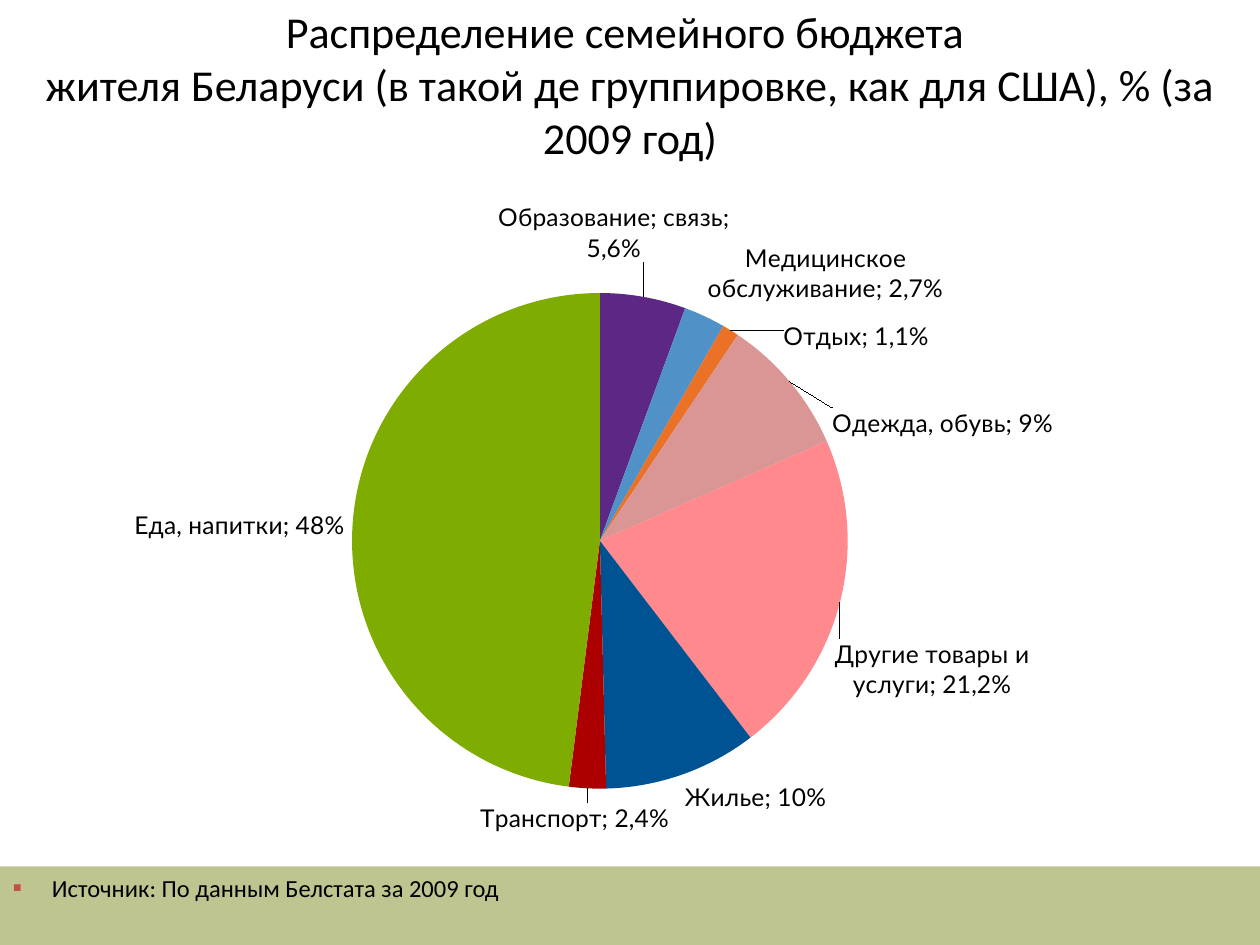
from lxml import etree
from pptx import Presentation
from pptx.chart.data import CategoryChartData
from pptx.dml.color import RGBColor
from pptx.enum.chart import XL_CHART_TYPE as ChartType, XL_LABEL_POSITION as LabelPosition
from pptx.enum.text import MSO_ANCHOR as Anchor, MSO_AUTO_SIZE as AutoSize, PP_ALIGN as Align
from pptx.oxml import parse_xml
from pptx.oxml.ns import nsdecls, qn
from pptx.util import Pt

COLORS = {"text": "000000", "background": "FFFFFF", "footer": "BEC591", "bullet": "C0504D"}

# Category, percentage, slice colour, label shift as a share of the chart size
SLICES = [
    ("Образование; связь", 5.6, "5D2884", (-0.12, -0.04)),
    ("Медицинское обслуживание", 2.7, "5092C8", (0.0, -0.01)),
    ("Отдых", 1.1, "EA7126", (0.04, 0.04)),
    ("Одежда, обувь", 9, "D99694", (0.03, 0.09)),
    ("Другие товары и услуги", 21.2, "FF898C", (-0.01, 0.05)),
    ("Жилье", 10, "005392", None),
    ("Транспорт", 2.4, "AC0000", (-0.01, 0.01)),
    ("Еда, напитки", 48, "7FAC00", None),
]


def write_text(paragraph, text, size, font="Calibri", color="text", align=None):
    paragraph.text = text
    paragraph.alignment = align
    paragraph.space_before = Pt(0)
    for run in paragraph.runs:
        run.font.size = Pt(size)
        run.font.name = font
        run.font.color.rgb = RGBColor.from_string(COLORS[color])


def manual_layout(**settings):
    parts = "".join(f'<c:{name} val="{value}"/>' for name, value in settings.items())
    return parse_xml(f'<c:layout {nsdecls("c")}><c:manualLayout>{parts}</c:manualLayout></c:layout>')


presentation = Presentation()
presentation.slide_width, presentation.slide_height = Pt(720), Pt(540)
slide = presentation.slides.add_slide(presentation.slide_layouts[1])
title, footer = slide.placeholders

# Title and source bar
for shape, top, height, fill, anchor in (
    (title, 0, 96, "background", Anchor.MIDDLE),
    (footer, 495, 45, "footer", Anchor.TOP),
):
    shape.left, shape.top, shape.width, shape.height = Pt(0), Pt(top), Pt(720), Pt(height)
    shape.fill.solid()
    shape.fill.fore_color.rgb = RGBColor.from_string(COLORS[fill])
    shape.text_frame.auto_size = AutoSize.NONE
    shape.text_frame.vertical_anchor = anchor

write_text(
    title.text_frame.paragraphs[0],
    "Распределение семейного бюджета \vжителя Беларуси (в такой де группировке, как для США), % (за 2009 год)",
    size=25.2, align=Align.CENTER,
)

source = footer.text_frame.paragraphs[0]
write_text(source, "Источник: По данным Белстата за 2009 год", size=14, align=Align.LEFT)
properties = source._p.get_or_add_pPr()
properties.set("marL", str(Pt(22.5)))
properties.set("indent", str(Pt(-22.5)))
bullet_color = etree.SubElement(properties, qn("a:buClr"))
etree.SubElement(bullet_color, qn("a:srgbClr"), val=COLORS["bullet"])
etree.SubElement(properties, qn("a:buSzPct"), val="110000")
etree.SubElement(properties, qn("a:buChar"), char="▪")

# Pie chart
chart_data = CategoryChartData(number_format="0.0")
chart_data.categories = [name for name, *_ in SLICES]
chart_data.add_series("Series 1", [value for _, value, *_ in SLICES])
chart = slide.shapes.add_chart(
    ChartType.PIE, Pt(11.5), Pt(101.5), Pt(697.5), Pt(388), chart_data
).chart
chart.has_title = False
chart.has_legend = False
chart.font.size = Pt(10)
chart.font.name = "Calibri"
chart.font.color.rgb = RGBColor.from_string(COLORS["text"])

plot_area = chart._chartSpace.chart.plotArea
for old_layout in plot_area.findall(qn("c:layout")):
    plot_area.remove(old_layout)
plot_area.insert(0, manual_layout(
    layoutTarget="inner", xMode="edge", yMode="edge", x=0.23, y=0.17, w=0.49, h=0.73))

plot = chart.plots[0]
plot.vary_by_categories = True
series = plot.series[0]
labels = series.data_labels
labels.show_category_name = True
labels.show_value = True
labels.number_format = "0.0"
labels.number_format_is_linked = False
labels.position = LabelPosition.OUTSIDE_END
labels.font.size = Pt(14)
labels.font.name = "Lato"
labels._element.find(qn("c:showLeaderLines")).set("val", "1")

# Slice colours and labels
for index, (name, value, color, shift) in enumerate(SLICES):
    point = series.points[index]
    point.format.fill.solid()
    point.format.fill.fore_color.rgb = RGBColor.from_string(color)
    label = point.data_label
    percent = str(value).replace(".", ",")
    write_text(label.text_frame.paragraphs[0], f"{name}; {percent}%", size=14, font="Lato")
    label.position = LabelPosition.OUTSIDE_END
    if shift:
        element = labels._element.findall(qn("c:dLbl"))[index]
        element.find(qn("c:idx")).addnext(manual_layout(x=shift[0], y=shift[1]))

presentation.save("out.pptx")
